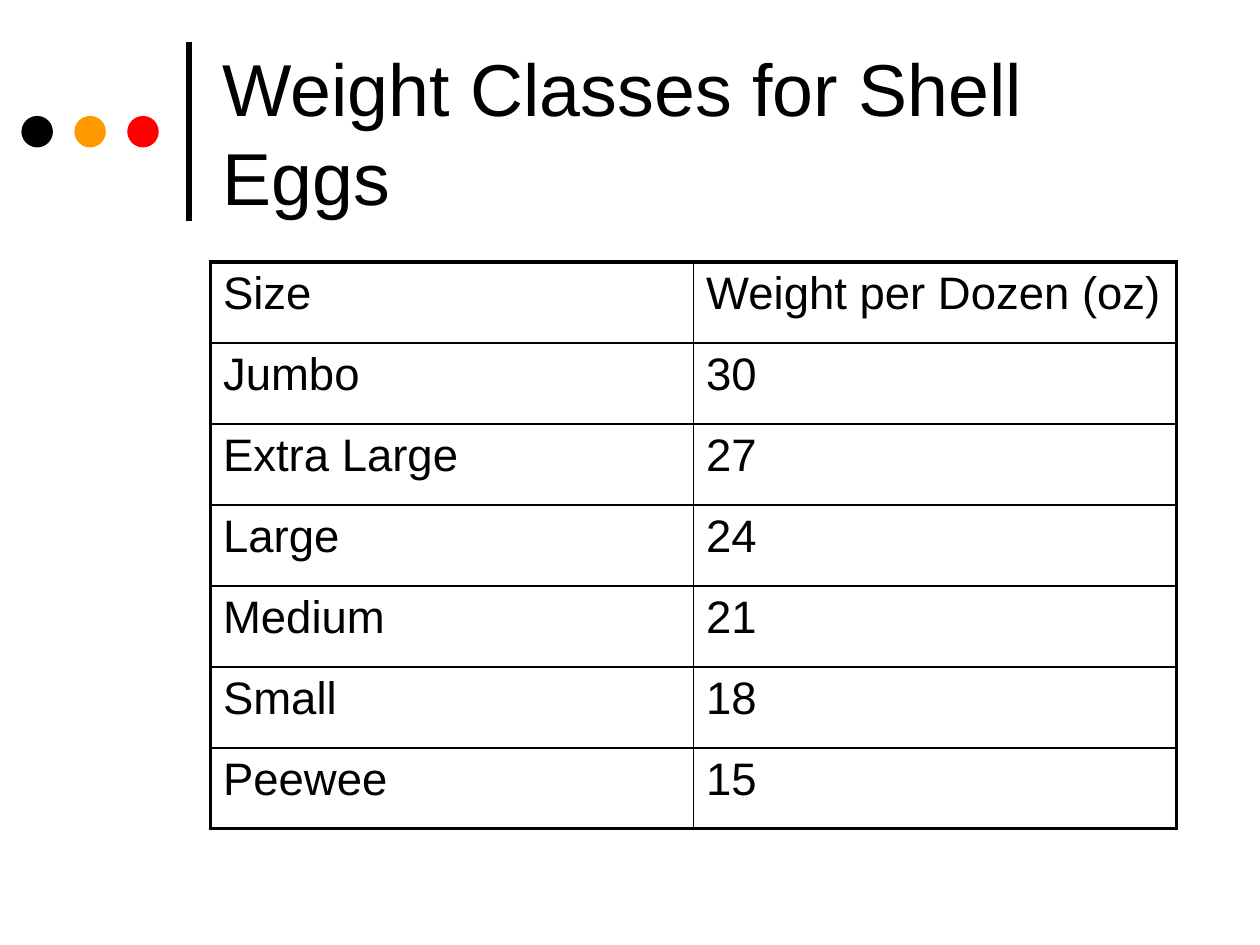
from lxml.etree import SubElement
from pptx import Presentation
from pptx.dml.color import RGBColor
from pptx.enum.shapes import MSO_CONNECTOR as Connector, MSO_SHAPE as Shape
from pptx.enum.text import MSO_ANCHOR as Anchor
from pptx.oxml import parse_xml
from pptx.oxml.ns import nsdecls, qn
from pptx.util import Inches, Pt

TITLE = "Weight Classes for Shell Eggs"
CLASSES = [
    ("Size", "Weight per Dozen (oz)"),
    ("Jumbo", "30"),
    ("Extra Large", "27"),
    ("Large", "24"),
    ("Medium", "21"),
    ("Small", "18"),
    ("Peewee", "15"),
]
INK = "000000"
DOTS = [INK, "FF9900", "FF0000"]
DOT_LEFT, DOT_TOP, DOT_SIZE, DOT_STEP = 0.17, 0.92, 0.25, 0.42
RULE_X, RULE_TOP, RULE_BOTTOM = 1.5, 0.33, 1.75
BODY_LEFT, BODY_WIDTH = 1.67, 7.67
TITLE_TOP, TITLE_HEIGHT = 0.21, 1.67
TABLE_TOP, TABLE_HEIGHT = 2.08, 4.5
OUTER, INNER = 2.25, 1


def color(code):
    return RGBColor.from_string(code)


def write(paragraph, words, size):
    paragraph.text = words
    paragraph.font.name = "Arial"
    paragraph.font.size = Pt(size)
    paragraph.font.color.rgb = color(INK)


def add_borders(cell, widths):
    properties = cell._tc.get_or_add_tcPr()
    for place, (side, width) in enumerate(widths.items()):
        properties.insert(place, parse_xml(
            f'<a:ln{side} {nsdecls("a")} w="{Pt(width)}"><a:solidFill>'
            f'<a:srgbClr val="{INK}"/></a:solidFill></a:ln{side}>'))


deck = Presentation()
deck.slide_width, deck.slide_height = Inches(10), Inches(7.5)
slide = deck.slides.add_slide(deck.slide_layouts[6])

rule = slide.shapes.add_connector(
    Connector.STRAIGHT, Inches(RULE_X), Inches(RULE_BOTTOM), Inches(RULE_X), Inches(RULE_TOP))
rule.line.color.rgb = color(INK)
rule.line.width = Pt(3)
SubElement(rule._element.spPr, qn("a:effectLst"))

for place, shade in enumerate(DOTS):
    dot = slide.shapes.add_shape(
        Shape.OVAL, Inches(DOT_LEFT + place * DOT_STEP), Inches(DOT_TOP),
        Inches(DOT_SIZE), Inches(DOT_SIZE))
    dot.shadow.inherit = False
    dot.fill.solid()
    dot.fill.fore_color.rgb = color(shade)
    dot.line.fill.background()

title = slide.shapes.add_textbox(
    Inches(BODY_LEFT), Inches(TITLE_TOP), Inches(BODY_WIDTH), Inches(TITLE_HEIGHT)).text_frame
title.word_wrap = True
title.vertical_anchor = Anchor.MIDDLE
write(title.paragraphs[0], TITLE, 42)

row_count, column_count = len(CLASSES), len(CLASSES[0])
table = slide.shapes.add_table(
    row_count, column_count, Inches(BODY_LEFT), Inches(TABLE_TOP),
    Inches(BODY_WIDTH), Inches(TABLE_HEIGHT)).table
table.first_row = table.horz_banding = False

for r, entries in enumerate(CLASSES):
    for c, entry in enumerate(entries):
        cell = table.cell(r, c)
        cell.fill.background()
        paragraph = cell.text_frame.paragraphs[0]
        write(paragraph, entry, 26)
        paragraph._p.get_or_add_pPr().insert(0, parse_xml(
            f'<a:spcBef {nsdecls("a")}><a:spcPct val="20000"/></a:spcBef>'))
        add_borders(cell, {
            "L": OUTER if c == 0 else INNER,
            "R": OUTER if c == column_count - 1 else INNER,
            "T": OUTER if r == 0 else INNER,
            "B": OUTER if r == row_count - 1 else INNER,
        })

deck.save("out.pptx")
